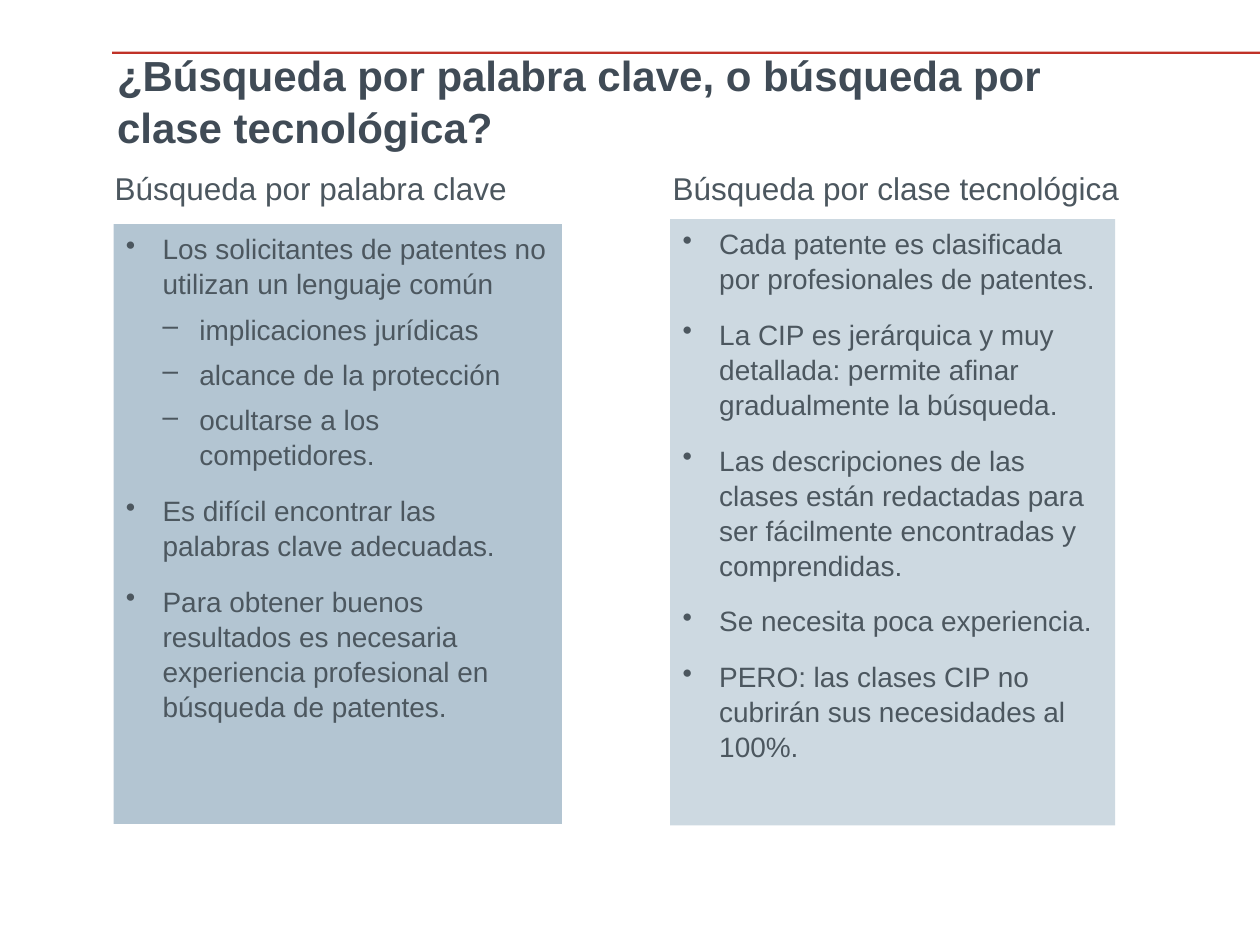
"""Build a slide comparing keyword search with technology class search."""
from lxml import etree
from pptx import Presentation
from pptx.dml.color import RGBColor
from pptx.enum.shapes import MSO_SHAPE
from pptx.enum.text import MSO_ANCHOR, PP_ALIGN
from pptx.oxml.ns import qn
from pptx.util import Cm, Pt

RECT = MSO_SHAPE.RECTANGLE
TOP, MIDDLE = MSO_ANCHOR.TOP, MSO_ANCHOR.MIDDLE
LEFT = PP_ALIGN.LEFT
RED = RGBColor(0xC0, 0x31, 0x27)
TITLE = RGBColor(0x40, 0x4B, 0x56)
TEXT = RGBColor(0x4C, 0x57, 0x5F)
BLUE = RGBColor(0xB3, 0xC5, 0xD2)
PALE = RGBColor(0xCD, 0xD9, 0xE1)
INDENT = Cm(0.74)

COLUMNS = [
    ("Búsqueda por palabra clave", (2.06, 8.48), (2.29, 4.52, 9.04, 12.09), BLUE, [
        (0, 6, "Los solicitantes de patentes no utilizan un lenguaje común"),
        (1, 6, "implicaciones jurídicas"),
        (1, 6, "alcance de la protección"),
        (1, 12, "ocultarse a los competidores."),
        (0, 12, "Es difícil encontrar las palabras clave adecuadas."),
        (0, 12, "Para obtener buenos resultados es necesaria experiencia "
                "profesional en búsqueda de patentes."),
    ]),
    ("Búsqueda por clase tecnológica", (13.31, 9.6), (13.51, 4.42, 8.97, 12.22), PALE, [
        (0, 12, "Cada patente es clasificada por profesionales de patentes."),
        (0, 12, "La CIP es jerárquica y muy detallada: permite afinar "
                "gradualmente la búsqueda."),
        (0, 12, "Las descripciones de las clases están redactadas para ser "
                "fácilmente encontradas y comprendidas."),
        (0, 12, "Se necesita poca experiencia."),
        (0, 12, "PERO: las clases CIP no cubrirán sus necesidades al 100%."),
    ]),
]

prs = Presentation()
prs.slide_width, prs.slide_height = Cm(25.4), Cm(19.05)
s = prs.slides.add_slide(prs.slide_layouts[6])


def add_rect(box, color):
    sp = s.shapes.add_shape(RECT, *map(Cm, box))
    sp.shadow.inherit = False
    sp.fill.solid()
    sp.fill.fore_color.rgb = color
    sp.line.fill.background()
    return sp


def add_run(p, text, size, color, bold=False):
    p.alignment = LEFT
    p.line_spacing = 1.04
    r = p.add_run()
    r.text = text
    r.font.name = "Arial"
    r.font.size = Pt(size)
    r.font.bold = bold
    r.font.color.rgb = color


add_rect((2.26, 1.04, 23.14, 0.05), RED)

sp = s.shapes.add_textbox(Cm(2.11), Cm(1.12), Cm(21.36), Cm(1.78))
tf = sp.text_frame
tf.word_wrap = True
tf.vertical_anchor = MIDDLE
add_run(tf.paragraphs[0],
        "¿Búsqueda por palabra clave, o búsqueda por clase tecnológica?",
        24, TITLE, True)

for heading, (left, width), box, color, items in COLUMNS:
    tf = add_rect(box, color).text_frame
    tf.word_wrap = True
    tf.vertical_anchor = TOP
    for i, (level, after, text) in enumerate(items):
        p = tf.add_paragraph() if i else tf.paragraphs[0]
        p.level = level
        pPr = p._p.get_or_add_pPr()
        pPr.set("marL", str(INDENT * (level + 1)))
        pPr.set("indent", str(-INDENT))
        etree.SubElement(pPr, qn("a:buChar")).set("char", "•–"[level])
        p.space_after = Pt(after)
        add_run(p, text, 16, TEXT)

    sp = s.shapes.add_textbox(Cm(left), Cm(3.25), Cm(width), Cm(1.02))
    tf = sp.text_frame
    tf.word_wrap = False
    add_run(tf.paragraphs[0], heading, 18, TEXT)

prs.save("out.pptx")
